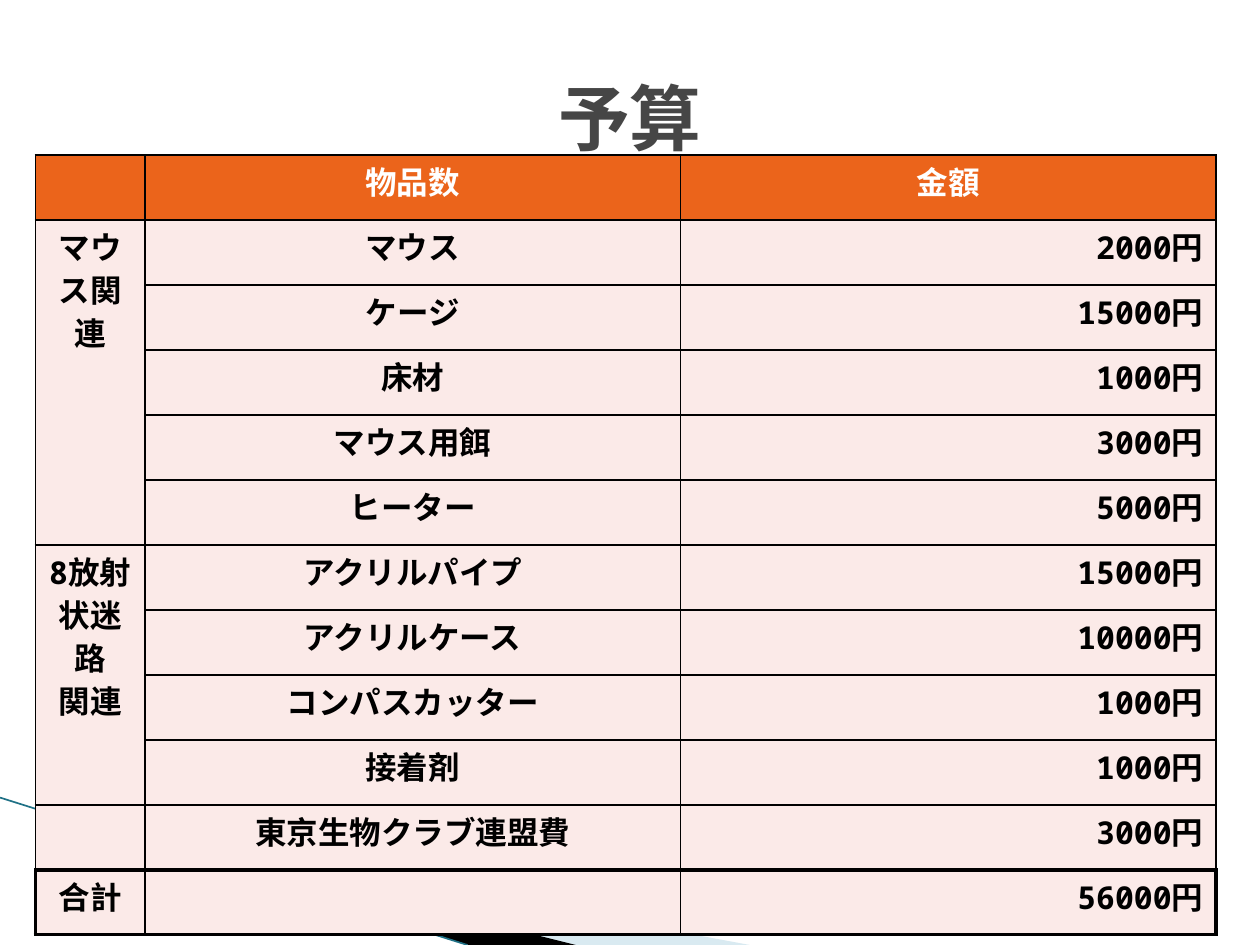
from lxml import etree
from pptx import Presentation
from pptx.dml.color import RGBColor as Rgb
from pptx.enum.text import MSO_ANCHOR as Anchor, PP_ALIGN as Align
from pptx.oxml import parse_xml
from pptx.oxml.ns import nsdecls, qn
from pptx.util import Inches, Pt

FONT = "Noto Sans Mono"
HUES = {"head": "EB641B", "body": "FBEAE8", "ink": "000000", "white": "FFFFFF",
        "title": "464646", "pale": "A0CBDC", "teal": "1F7186"}
THIN, THICK = 1, 2.25

HEADS = ["", "物品数", "金額"]
# Group label (one entry per paragraph) and its items
GROUPS = [
    (["マウス関連"], [("マウス", 2000), ("ケージ", 15000), ("床材", 1000),
                 ("マウス用餌", 3000), ("ヒーター", 5000)]),
    (["8放射状迷路", "関連"], [("アクリルパイプ", 15000), ("アクリルケース", 10000),
                       ("コンパスカッター", 1000), ("接着剤", 1000)]),
    ([], [("東京生物クラブ連盟費", 3000)]),
    (["合計"], [("", 56000)]),
]


def hue(name):
    return Rgb.from_string(HUES[name])


def write(frame, lines, size, color, align):
    for i, line in enumerate(lines):
        para = frame.paragraphs[0] if i == 0 else frame.add_paragraph()
        para.alignment = align
        run = para.add_run()
        run.text = line
        font = run.font
        font.size, font.bold = Pt(size), True
        font.color.rgb = hue(color)
        font.name = FONT
        etree.SubElement(font._element, qn("a:ea")).set("typeface", FONT)


def edge(cell, widths):
    """Draw the left, right, top and bottom borders of a cell."""
    props = cell._tc.get_or_add_tcPr()
    for i, (side, width) in enumerate(zip("LRTB", widths)):
        props.insert(i, parse_xml(
            f'<a:ln{side} {nsdecls("a")} w="{int(Pt(width))}"><a:solidFill>'
            f'<a:srgbClr val="{HUES["ink"]}"/></a:solidFill></a:ln{side}>'))


def fill_cell(cell, lines, back, color="ink", align=Align.CENTER):
    cell.fill.solid()
    cell.fill.fore_color.rgb = hue(back)
    lines = [line for line in lines if line]
    write(cell.text_frame, lines, 18, color, align)
    if not lines:
        cell.text_frame.paragraphs[0].font.size = Pt(18)


def add_wedge(slide, points, color, alpha=None):
    start, *rest = [(Inches(x), Inches(y)) for x, y in points]
    pen = slide.shapes.build_freeform(*start)
    pen.add_line_segments(rest)
    shape = pen.convert_to_shape()
    shape.shadow.inherit = False
    shape.line.fill.background()
    shape.fill.solid()
    shape.fill.fore_color.rgb = hue(color)
    if alpha:
        tint = shape.fill._xPr.find(".//" + qn("a:srgbClr"))
        etree.SubElement(tint, qn("a:alpha")).set("val", str(alpha * 1000))


def add_decor(slide, left, top, base):
    """Slanted wedges and a line running down to the slide's lower edge."""
    add_wedge(slide, [(left + 0.55, top + 0.17), (5.95, base), (4.56, base)], "pale", 40)
    add_wedge(slide, [(left + 0.53, top + 0.16), (4.57, base), (3.72, base)], "ink")
    line = slide.shapes.add_connector(1, Inches(left), Inches(top),
                                      Inches(3.71), Inches(base))
    line.line.color.rgb = hue("teal")
    line.line.width = Pt(0.95)
    etree.SubElement(line._element.spPr, qn("a:effectLst"))


def add_budget(slide, left, top, width, height):
    count = 1 + sum(len(items) for _, items in GROUPS)
    table = slide.shapes.add_table(count, 3, Inches(left), Inches(top),
                                   Inches(width), Inches(height)).table
    first = 0.87
    for col, wide in zip(table.columns, [first] + [(width - first) / 2] * 2):
        col.width = Inches(wide)
    for row in table.rows:
        row.height = Inches(height / count)

    # Header row
    for c, head in enumerate(HEADS):
        fill_cell(table.cell(0, c), [head], "head", "white")

    # Groups with their items
    r = 1
    for label, items in GROUPS:
        lead = table.cell(r, 0)
        if len(items) > 1:
            lead.merge(table.cell(r + len(items) - 1, 0))
            lead._tc.get_or_add_tcPr().set("vert", "eaVert")
        fill_cell(lead, label, "body")
        for name, cost in items:
            fill_cell(table.cell(r, 1), [name], "body")
            fill_cell(table.cell(r, 2), [f"{cost}円"], "body", align=Align.RIGHT)
            r += 1

    # Borders: the total row has a thick outline
    last = count - 1
    for r in range(count):
        for c in range(3):
            total = r == last
            edge(table.cell(r, c), [
                THICK if total and c == 0 else THIN,
                THICK if total and c == 2 else THIN,
                THICK if total else THIN,
                THICK if r >= last - 1 else THIN])


def add_title(slide, left, top, width, height):
    title = slide.shapes.title
    title.left, title.top = Inches(left), Inches(top)
    title.width, title.height = Inches(width), Inches(height)
    title.text_frame.vertical_anchor = Anchor.MIDDLE
    write(title.text_frame, ["予算"], 41, "title", Align.CENTER)
    slide.shapes._spTree.append(title._element)  # in front of the table


def main():
    deck = Presentation()
    deck.slide_width, deck.slide_height = Inches(10), Inches(7.5)
    slide = deck.slides.add_slide(deck.slide_layouts[5])
    add_decor(slide, 0, 6.33, 7.5)
    add_budget(slide, 0.28, 1.23, 9.37, 6.19)
    add_title(slide, 0.5, 0.3, 9, 1.25)
    deck.save("out.pptx")


if __name__ == "__main__":
    main()
